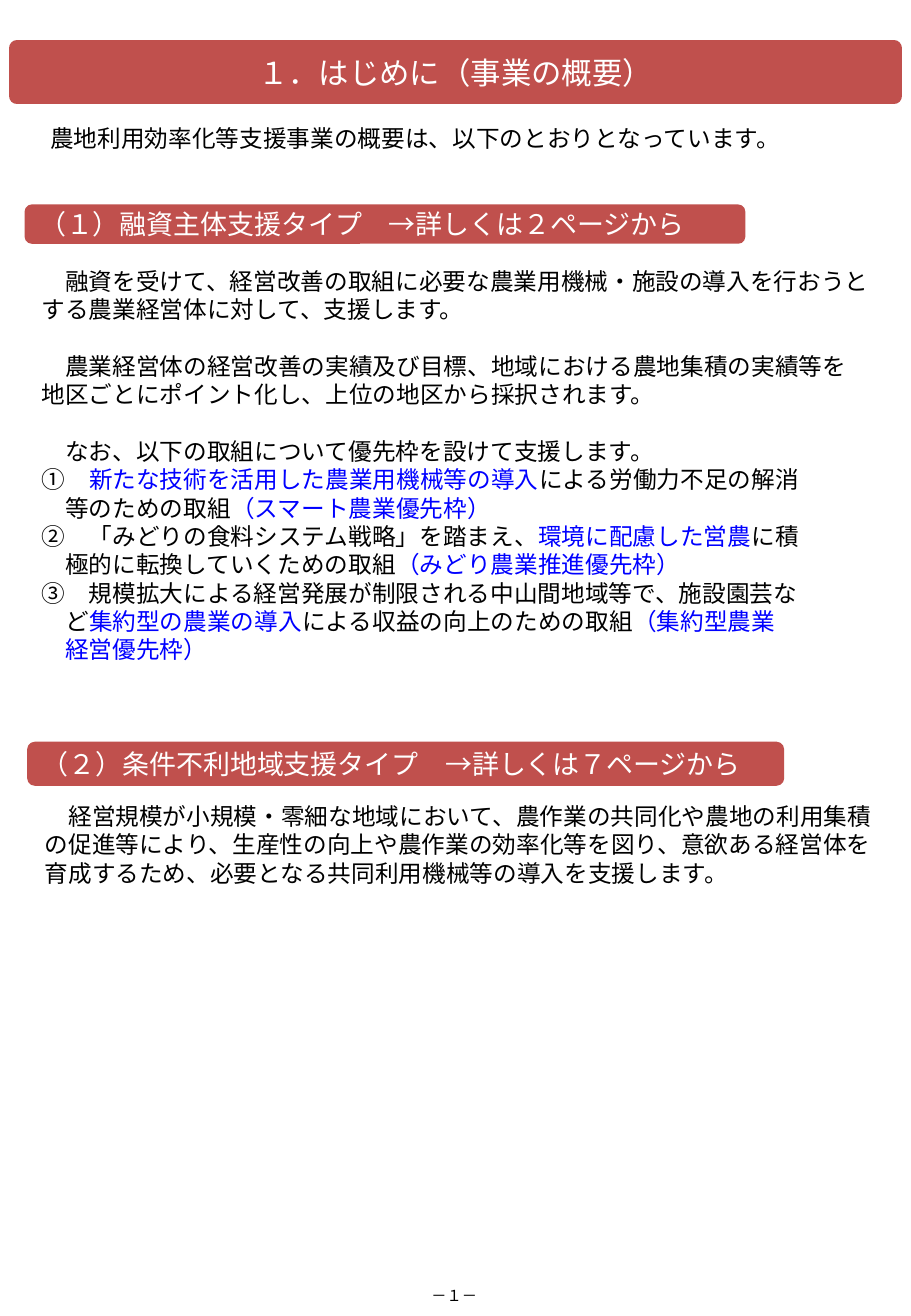
from dataclasses import dataclass
from typing import Any, Optional

from lxml import etree
from pptx import Presentation
from pptx import util as u
from pptx.dml import color
from pptx.enum import lang, shapes, text
from pptx.oxml import ns

WIDTH, HEIGHT = u.Inches(7.5), u.Inches(10.83)
FONT = "Noto Sans CJK JP"
RED, WHITE, BLACK, BLUE = "C0504D", "FFFFFF", "000000", "0000FF"
LINE_HEIGHT = 1.2
LEFT, CENTER = text.PP_ALIGN.LEFT, text.PP_ALIGN.CENTER
TOP, MIDDLE = text.MSO_ANCHOR.TOP, text.MSO_ANCHOR.MIDDLE
RECTANGLE = shapes.MSO_SHAPE.RECTANGLE
ROUNDED = shapes.MSO_SHAPE.ROUNDED_RECTANGLE
DEFAULT_INSETS = (0.1, 0.05, 0.1, 0.05)
BODY_INSETS = (0.04, 0.04, 0.04, 0.04)


@dataclass
class Block:
    """Place is left, top, width, height in percent of the slide."""
    place: tuple[float, float, float, float]
    # Each group is a run of lines; "|" switches between plain and blue text
    groups: list[list[str]]
    size: float = 14
    ink: str = BLACK
    kind: Optional[Any] = None
    corner: Optional[float] = None
    fill: str = WHITE
    line: Optional[float] = None
    insets: tuple[float, float, float, float] = DEFAULT_INSETS
    align: Any = LEFT
    anchor: Any = TOP


def rgb(value: str) -> color.RGBColor:
    return color.RGBColor.from_string(value)


def apply(target: Any, values: dict[str, Any]) -> None:
    for name, value in values.items():
        setattr(target, name, value)


def add_span(para: Any, words: str, size: float, ink: str) -> None:
    span = para.add_run()
    span.text = words
    apply(span.font, {"size": u.Pt(size), "name": FONT,
                      "language_id": lang.MSO_LANGUAGE_ID.JAPANESE})
    span.font.color.rgb = rgb(ink)
    east_asian = etree.SubElement(span.font._element, ns.qn("a:ea"))
    east_asian.set("typeface", FONT)


def write(frame: Any, block: Block) -> None:
    left, top, right, bottom = map(u.Inches, block.insets)
    apply(frame, {"margin_left": left, "margin_top": top,
                  "margin_right": right, "margin_bottom": bottom,
                  "word_wrap": True, "vertical_anchor": block.anchor})
    spacing = u.Pt(block.size * LINE_HEIGHT)
    for group_index, group in enumerate(block.groups):
        for line_index, line in enumerate(group):
            first = group_index == line_index == 0
            para = frame.paragraphs[0] if first else frame.add_paragraph()
            new_group = line_index == 0 and not first
            apply(para, {"alignment": block.align, "line_spacing": spacing,
                         "space_before": spacing if new_group else u.Pt(0)})
            for index, words in enumerate(line.split("|")):
                if words:
                    add_span(para, words, block.size, BLUE if index % 2 else block.ink)


def draw(page: Any, block: Block) -> None:
    place = [round(share / 100 * side)
             for share, side in zip(block.place, (WIDTH, HEIGHT) * 2)]
    if block.kind is None:
        box = page.shapes.add_textbox(*place)
    else:
        box = page.shapes.add_shape(block.kind, *place)
        box.shadow.inherit = False
        box.fill.solid()
        box.fill.fore_color.rgb = rgb(block.fill)
        if block.line is None:
            box.line.fill.background()
        else:
            box.line.color.rgb = rgb(block.fill)
            box.line.width = u.Pt(block.line)
        if block.corner is not None:
            box.adjustments[0] = block.corner
    write(box.text_frame, block)


def heading(place: tuple[float, float, float, float], words: str) -> Block:
    return Block(place, [[words]], size=16, ink=WHITE, kind=ROUNDED,
                 fill=RED, line=1, anchor=MIDDLE)


BLOCKS = [
    # Page number, title and introduction
    Block((-0.13, 97.32, 100, 2.31), [["－１－"]], size=9, align=CENTER),
    Block((1.87, 3.69, 96.27, 3.6), [["１．はじめに（事業の概要）"]], size=18, ink=WHITE,
          kind=RECTANGLE, fill=RED, line=10, align=CENTER, anchor=MIDDLE),
    Block((1.87, 8.68, 98.13, 3.23),
          [["　農地利用効率化等支援事業の概要は、以下のとおりとなっています。"]],
          insets=(0.08, 0.08, 0.04, 0.04)),
    # Section headings
    heading((3.07, 56.42, 82.93, 3.23), "（２）条件不利地域支援タイプ　→詳しくは７ページから"),
    heading((2.8, 15.6, 78.93, 2.86), "（１）融資主体支援タイプ　→詳しくは２ページから"),
    # Section texts
    Block((4.27, 60.48, 94.4, 7.66), [[
        "　経営規模が小規模・零細な地域において、農作業の共同化や農地の利用集積"
        "の促進等により、生産性の向上や農作業の効率化等を図り、意欲ある経営体を"
        "育成するため、必要となる共同利用機械等の導入を支援します。",
    ]], kind=ROUNDED, corner=0.033, insets=BODY_INSETS),
    Block((3.6, 19.58, 92.8, 32.69), [
        ["　融資を受けて、経営改善の取組に必要な農業用機械・施設の導入を行おうと"
         "する農業経営体に対して、支援します。"],
        ["　農業経営体の経営改善の実績及び目標、地域における農地集積の実績等を"
         "地区ごとにポイント化し、上位の地区から採択されます。"],
        ["　なお、以下の取組について優先枠を設けて支援します。",
         "①　|新たな技術を活用した農業用機械等の導入|による労働力不足の解消",
         "　等のための取組|（スマート農業優先枠）",
         "②　「みどりの食料システム戦略」を踏まえ、|環境に配慮した営農|に積",
         "　極的に転換していくための取組|（みどり農業推進優先枠）",
         "③　規模拡大による経営発展が制限される中山間地域等で、施設園芸な",
         "　ど|集約型の農業の導入|による収益の向上のための取組|（集約型農業",
         "|　経営優先枠）"],
    ], kind=ROUNDED, corner=0.032, insets=BODY_INSETS),
]


def main() -> None:
    deck = Presentation()
    apply(deck, {"slide_width": WIDTH, "slide_height": HEIGHT})
    page = deck.slides.add_slide(deck.slide_layouts[6])
    for block in BLOCKS:
        draw(page, block)
    deck.save("out.pptx")


if __name__ == "__main__":
    main()
